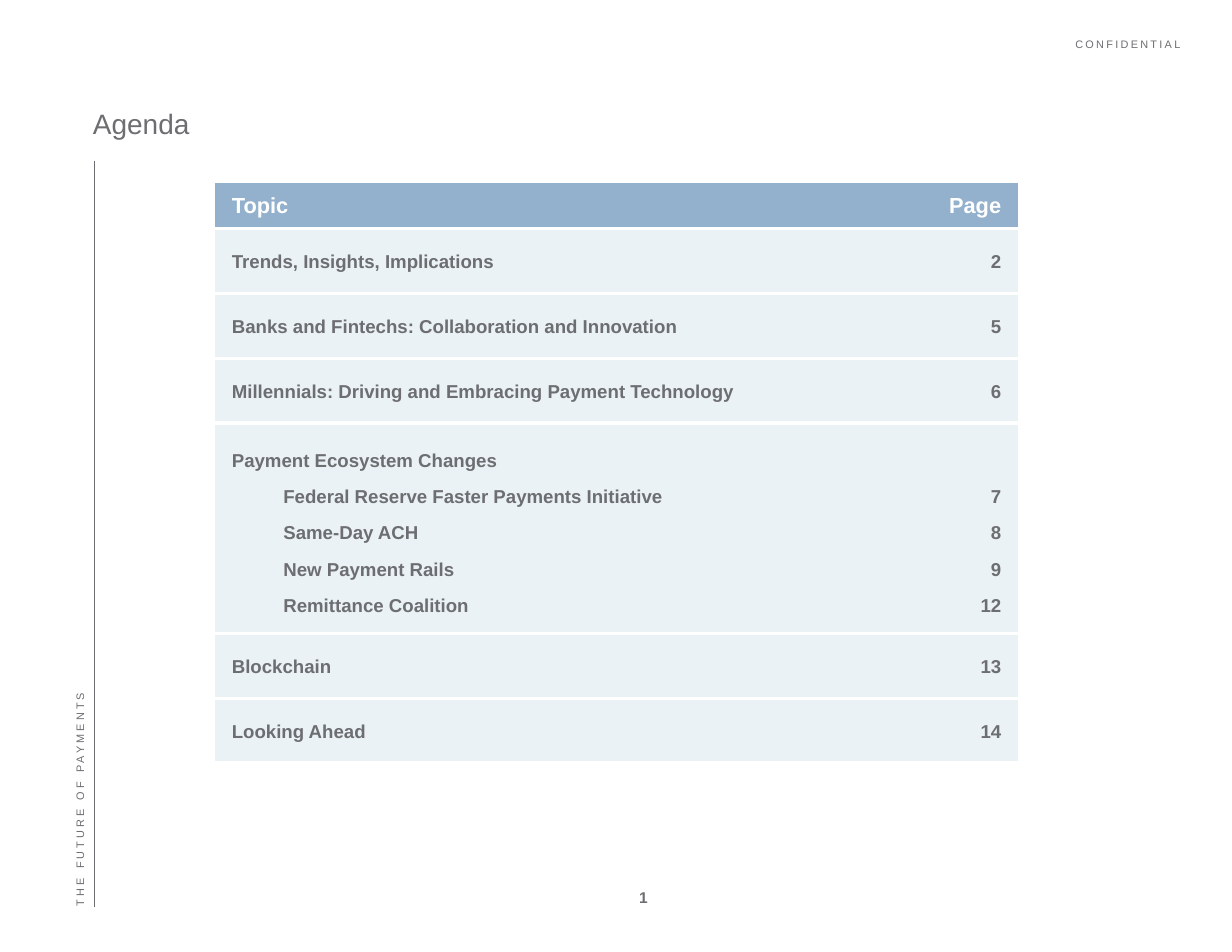
"""Build the agenda slide of a payments presentation."""
import pptx
import pptx.util
import pptx.dml.color
import pptx.enum.shapes
import pptx.enum.text
import pptx.oxml.ns
import lxml.etree

GREY, WHITE, HEADER_BLUE, PALE_BLUE = "6D6E71", "FFFFFF", "93B1CC", "EAF2F5"
ALIGN = pptx.enum.text.PP_ALIGN
ANCHOR = pptx.enum.text.MSO_ANCHOR
qn = pptx.oxml.ns.qn


def paint(color_format, hex_color):
    color_format.rgb = pptx.dml.color.RGBColor.from_string(hex_color)


def style(paragraph, size, color=GREY, bold=False, align=ALIGN.LEFT, tracking=0):
    paragraph.alignment = align
    for run in paragraph.runs:
        run.font.name = "Arial"
        run.font.size = pptx.util.Pt(size)
        run.font.bold = bold
        paint(run.font.color, color)
        if tracking:
            run.font._element.set("spc", str(int(tracking * 100)))


deck = pptx.Presentation()
deck.slide_width = pptx.util.Inches(11)
deck.slide_height = pptx.util.Inches(8.5)
column = deck.slide_width // 110
row = deck.slide_height // 85
slide = deck.slides.add_slide(deck.slide_layouts[5])

rule = slide.shapes.add_connector(
    pptx.enum.shapes.MSO_CONNECTOR.STRAIGHT,
    int(8.4 * column), int(14.4 * row), int(8.4 * column), int(81 * row))
paint(rule.line.color, GREY)
rule.line.width = pptx.util.Pt(0.35)
lxml.etree.SubElement(rule._element.spPr, qn("a:effectLst"))

title = slide.shapes.title
title.left, title.top = int(8.3 * column), int(5.8 * row)
title.width, title.height = int(96.7 * column), int(6.7 * row)
heading = title.text_frame
heading.text = "Agenda"
heading.auto_size = pptx.enum.text.MSO_AUTO_SIZE.NONE
heading.vertical_anchor = ANCHOR.BOTTOM
heading.margin_left = heading.margin_right = heading.margin_top = heading.margin_bottom = 0
heading.paragraphs[0].line_spacing = pptx.util.Pt(27.9)
style(heading.paragraphs[0], 18)

labels = [
    ("CONFIDENTIAL", (95.7, 3.8, 9.7, 0.7), 0, ANCHOR.TOP, 5, (7, GREY, False, ALIGN.RIGHT, 1.5)),
    ("1", (56.6, 79.3, 1.7, 1.7), 0, ANCHOR.MIDDLE, None, (10, GREY, True, ALIGN.CENTER)),
    ("THE FUTURE OF PAYMENTS", (-23.3, 49.9, 60.5, 1.5), 270, ANCHOR.BOTTOM, None,
     (7, GREY, False, ALIGN.LEFT, 2)),
]
for wording, (left, top, width, height), rotation, anchor, leading, look in labels:
    label = slide.shapes.add_textbox(
        int(left * column), int(top * row), int(width * column), int(height * row))
    label.rotation = rotation
    frame = label.text_frame
    frame.text = wording
    frame.word_wrap = rotation != 0
    frame.vertical_anchor = anchor
    frame.margin_left = frame.margin_right = frame.margin_top = frame.margin_bottom = 0
    if leading:
        frame.paragraphs[0].line_spacing = pptx.util.Pt(leading)
    style(frame.paragraphs[0], *look)

topics = [
    ("Topic", "Page"),
    ("Trends, Insights, Implications", "2"),
    ("Banks and Fintechs: Collaboration and Innovation", "5"),
    ("Millennials: Driving and Embracing Payment Technology", "6"),
    ("Payment Ecosystem Changes\nFederal Reserve Faster Payments Initiative\nSame-Day ACH\n"
     "New Payment Rails\nRemittance Coalition", "7\n8\n9\n12"),
    ("Blockchain", "13"),
    ("Looking Ahead", "14"),
]
row_heights = [4, 5.8, 5.8, 5.8, 18.2, 5.8, 5.8]
agenda = slide.shapes.add_table(
    len(topics), 2, int(19.2 * column), int(16.2 * row),
    int(71.7 * column), int(sum(row_heights) * row)).table
agenda.horz_banding = False
agenda.columns[0].width = int(57.2 * column)
agenda.columns[1].width = int(14.5 * column)

for index, (entry, height) in enumerate(zip(topics, row_heights)):
    agenda.rows[index].height = int(height * row)
    is_header = index == 0
    for side, wording in enumerate(entry):
        cell = agenda.cell(index, side)
        cell.text_frame.text = wording
        several = "\n" in wording
        cell.vertical_anchor = ANCHOR.BOTTOM if several else ANCHOR.MIDDLE
        cell.margin_left = cell.margin_right = int(1.5 * column)
        cell.margin_top = cell.margin_bottom = int((0.8 if is_header else 1.5) * row)
        cell.fill.solid()
        paint(cell.fill.fore_color, HEADER_BLUE if is_header else PALE_BLUE)
        for place, paragraph in enumerate(cell.text_frame.paragraphs):
            paragraph.line_spacing = 1.1
            if place:
                paragraph.space_before = pptx.util.Pt(8.6)
                if side == 0:
                    paragraph._p.get_or_add_pPr().set("marL", str(int(4.6 * column)))
            style(paragraph, 14 if is_header else 12, WHITE if is_header else GREY,
                  True, ALIGN.RIGHT if side else ALIGN.LEFT)
        properties = cell._tc.get_or_add_tcPr()
        for order, edge in enumerate(("lnL", "lnR", "lnT", "lnB")):
            border = lxml.etree.Element(qn("a:" + edge))
            if edge in ("lnL", "lnR"):
                lxml.etree.SubElement(border, qn("a:noFill"))
            else:
                border.set("w", str(pptx.util.Pt(2.25)))
                fill = lxml.etree.SubElement(border, qn("a:solidFill"))
                lxml.etree.SubElement(fill, qn("a:srgbClr")).set("val", WHITE)
            properties.insert(order, border)

deck.save("out.pptx")
